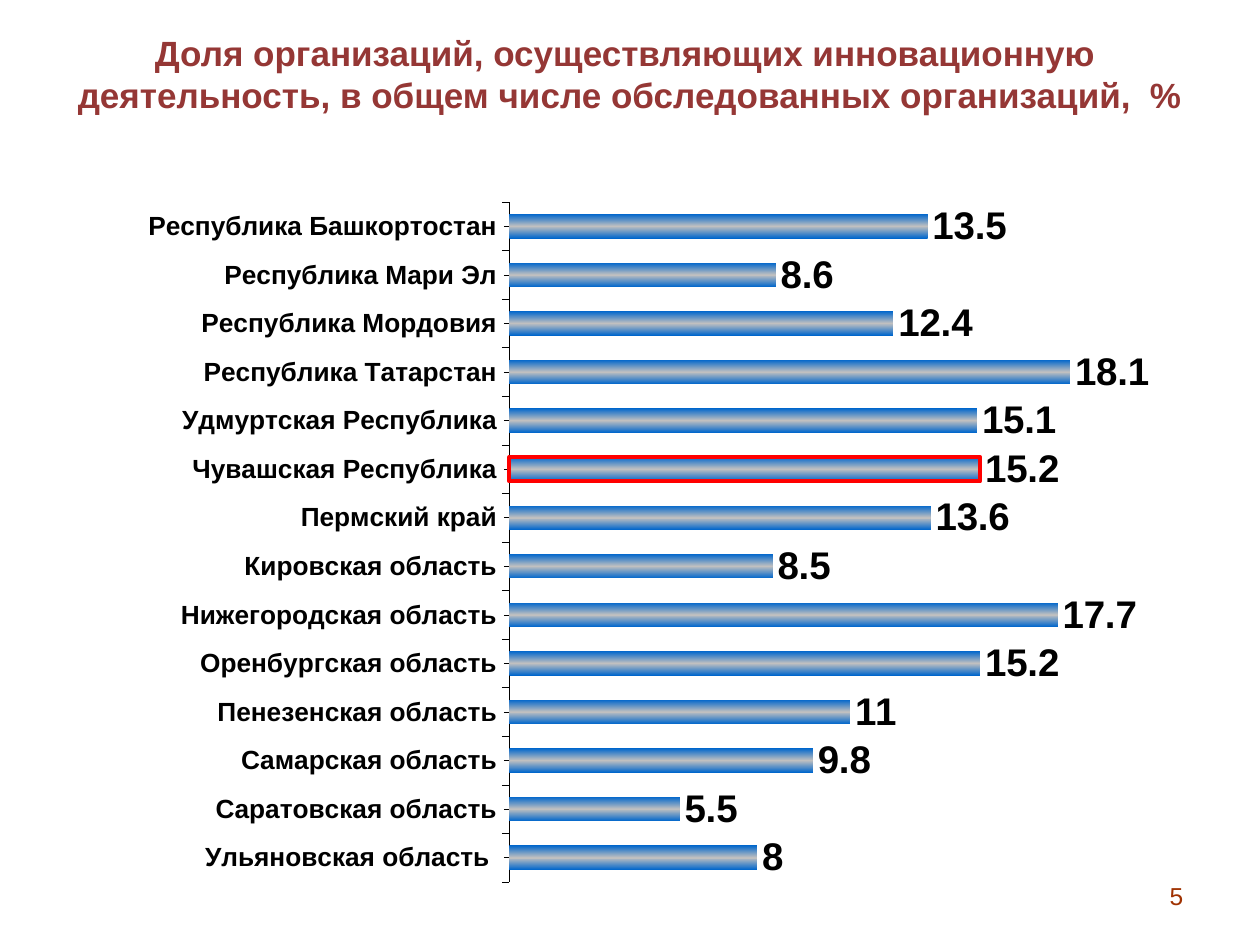
from copy import deepcopy

from pptx import Presentation
from pptx.chart.data import CategoryChartData
from pptx.dml.color import RGBColor
from pptx.enum.chart import XL_CHART_TYPE as ChartType
from pptx.enum.chart import XL_LABEL_POSITION as LabelPosition
from pptx.enum.chart import XL_TICK_MARK as TickMark
from pptx.enum.text import MSO_ANCHOR as Anchor
from pptx.enum.text import PP_ALIGN as Align
from pptx.oxml import parse_xml
from pptx.oxml.ns import nsdecls, qn
from pptx.util import Inches, Pt

COLORS = {"title": "953735", "number": "A03202", "text": "000000", "white": "FFFFFF",
          "bar_edge": "0066CC", "bar_middle": "C0C0C0", "highlight": "FF0000"}
HIGHLIGHTED = "Чувашская Республика"
SHARES = {
    "Ульяновская область ": 8,
    "Саратовская область": 5.5,
    "Самарская область": 9.8,
    "Пенезенская область": 11,
    "Оренбургская область": 15.2,
    "Нижегородская область": 17.7,
    "Кировская область": 8.5,
    "Пермский край": 13.6,
    HIGHLIGHTED: 15.2,
    "Удмуртская Республика": 15.1,
    "Республика Татарстан": 18.1,
    "Республика Мордовия": 12.4,
    "Республика Мари Эл": 8.6,
    "Республика Башкортостан": 13.5,
}


def color(name):
    return RGBColor.from_string(COLORS[name])


def set_font(font, size, color_name, bold):
    for key, value in {"name": "Arial", "size": Pt(size), "bold": bold}.items():
        setattr(font, key, value)
    font.color.rgb = color(color_name)


deck = Presentation()
deck.slide_width, deck.slide_height = Inches(10), Inches(7.5)
page = deck.slides.add_slide(deck.slide_layouts[5])

# Chart
data = CategoryChartData()
data.categories = list(SHARES)
data.add_series("Series 1", list(SHARES.values()))
chart = page.shapes.add_chart(ChartType.BAR_CLUSTERED, Inches(0.59), Inches(1.47),
                              Inches(8.63), Inches(5.84), data).chart
chart.has_legend = chart.has_title = False
set_font(chart.font, 22, "text", True)

# Inner plot area as fractions of the chart
plot_area = chart.element.find(".//" + qn("c:plotArea"))
for old_layout in plot_area.findall(qn("c:layout")):
    plot_area.remove(old_layout)
plot_area.insert(0, parse_xml(
    f'<c:layout {nsdecls("c")}><c:manualLayout><c:layoutTarget val="inner"/>'
    '<c:xMode val="edge"/><c:yMode val="edge"/><c:x val="0.4"/><c:y val="0.023"/>'
    '<c:w val="0.57"/><c:h val="0.924"/></c:manualLayout></c:layout>'))

# Axes
regions = chart.category_axis
regions.major_tick_mark = regions.minor_tick_mark = TickMark.OUTSIDE
regions.format.line.color.rgb = color("text")
regions.format.line.width = Pt(0.31)
set_font(regions.tick_labels.font, 15, "text", True)
scale = chart.value_axis
for key, value in {"minimum_scale": 0, "maximum_scale": 20, "major_unit": 5,
                   "has_major_gridlines": True, "visible": False}.items():
    setattr(scale, key, value)
grid_line = scale.major_gridlines.format.line
grid_line.color.rgb = color("white")
grid_line.width = Pt(1.25)

# Bars and value labels
plot = chart.plots[0]
plot.vary_by_categories = False
plot.gap_width = 100
plot.has_data_labels = True
labels = plot.data_labels
labels.show_value = True
labels.position = LabelPosition.OUTSIDE_END
set_font(labels.font, 22, "text", True)

series = plot.series[0]
highlight = series.points[list(SHARES).index(HIGHLIGHTED)]
highlight.format.line.color.rgb = color("highlight")
highlight.format.line.width = Pt(2.25)
fills = [series.format.fill, highlight.format.fill]
for fill in fills:
    fill.gradient()
    fill.gradient_angle = 90
for stop_list in series._element.iter(qn("a:gsLst")):
    stop_list.append(deepcopy(stop_list[0]))
for fill in fills:
    stops = zip(fill.gradient_stops, (0, 0.5, 1), ("bar_edge", "bar_middle", "bar_edge"))
    for stop, position, name in stops:
        stop.position = position
        stop.color.rgb = color(name)

# Title
title = page.shapes.title
title.left, title.top = Inches(0.1), Inches(0.2)
title.width, title.height = Inches(9.8), Inches(0.77)
title.text_frame.text = ("Доля организаций, осуществляющих инновационную \n"
                         "деятельность, в общем числе обследованных организаций,  %")
title.text_frame.vertical_anchor = Anchor.TOP
for para in title.text_frame.paragraphs:
    para.alignment = Align.CENTER
    para.space_before = Pt(0)
    set_font(para.font, 20, "title", True)

# Slide number
box = page.shapes.add_textbox(Inches(9.02), Inches(6.9), Inches(0.47), Inches(0.42))
box.text_frame.word_wrap = True
box.text_frame.vertical_anchor = Anchor.MIDDLE
para = box.text_frame.paragraphs[0]
para.text = "5"
para.alignment = Align.RIGHT
set_font(para.font, 14, "number", False)

deck.save("out.pptx")
